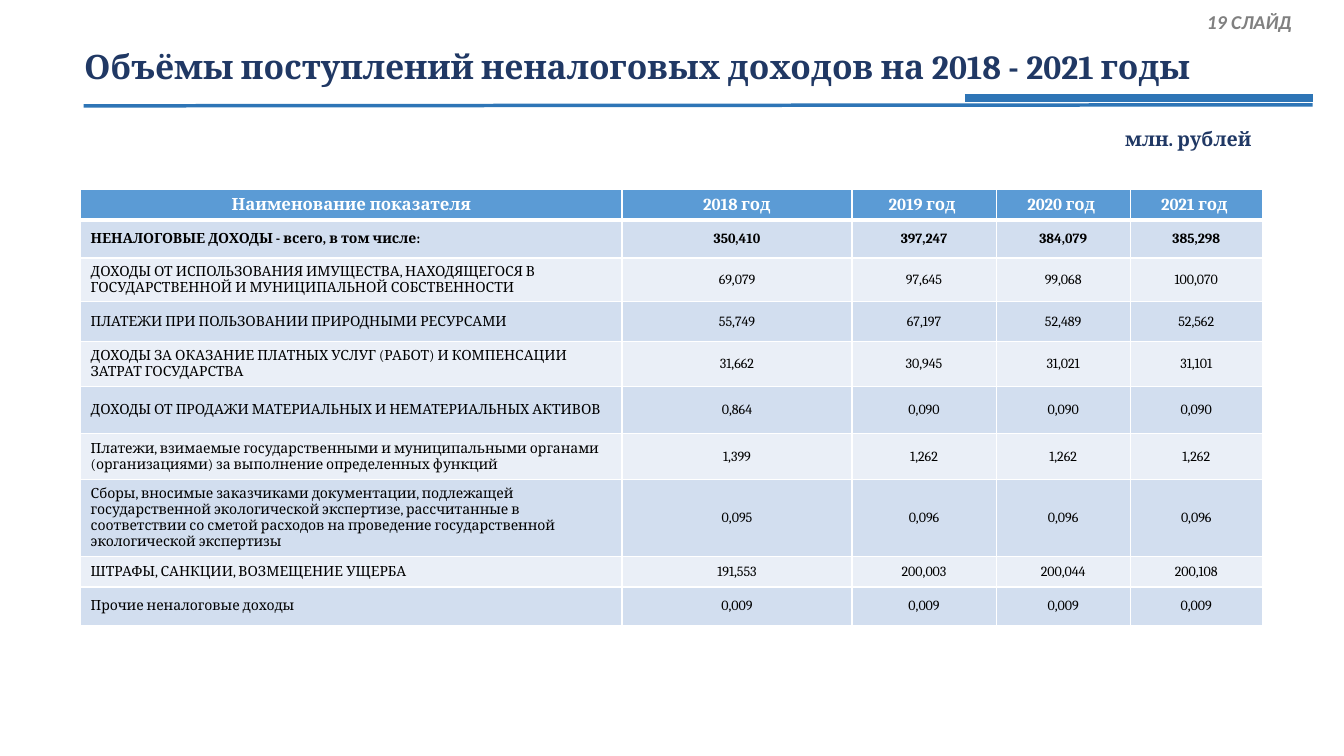
from dataclasses import dataclass

from lxml.etree import SubElement
from pptx import Presentation
from pptx.dml.color import RGBColor
from pptx.enum.shapes import MSO_CONNECTOR
from pptx.enum.text import MSO_ANCHOR, PP_ALIGN
from pptx.oxml import parse_xml
from pptx.oxml.ns import nsdecls, qn
from pptx.util import Emu, Pt

PX = 9144  # 100 px to the inch


@dataclass(frozen=True)
class Theme:
    serif: str = "Cambria"
    sans: str = "Calibri"
    navy: str = "203864"
    gray: str = "808080"
    rule: str = "2E75B6"
    header: str = "5B9BD5"
    bands: tuple = ("D2DEEF", "EAEFF7")
    white: str = "FFFFFF"
    black: str = "000000"
    title_size: int = 24
    label_size: int = 14
    header_size: int = 12
    body_size: int = 10


THEME = Theme()

YEARS = ["2018 год", "2019 год ", "2020 год ", "2021 год "]
INCOME = [
    ("НЕНАЛОГОВЫЕ ДОХОДЫ - всего, в том числе:", "350,410", "397,247", "384,079", "385,298"),
    ("ДОХОДЫ ОТ ИСПОЛЬЗОВАНИЯ ИМУЩЕСТВА, НАХОДЯЩЕГОСЯ В ГОСУДАРСТВЕННОЙ И "
     "МУНИЦИПАЛЬНОЙ СОБСТВЕННОСТИ", "69,079", "97,645", "99,068", "100,070"),
    ("ПЛАТЕЖИ ПРИ ПОЛЬЗОВАНИИ ПРИРОДНЫМИ РЕСУРСАМИ", "55,749", "67,197", "52,489", "52,562"),
    ("ДОХОДЫ ЗА ОКАЗАНИЕ ПЛАТНЫХ УСЛУГ (РАБОТ) И КОМПЕНСАЦИИ ЗАТРАТ ГОСУДАРСТВА",
     "31,662", "30,945", "31,021", "31,101"),
    ("ДОХОДЫ ОТ ПРОДАЖИ МАТЕРИАЛЬНЫХ И НЕМАТЕРИАЛЬНЫХ АКТИВОВ",
     "0,864", "0,090", "0,090", "0,090"),
    ("Платежи, взимаемые государственными и муниципальными органами "
     "(организациями) за выполнение определенных функций", "1,399", "1,262", "1,262", "1,262"),
    ("Сборы, вносимые заказчиками документации, подлежащей государственной "
     "экологической экспертизе, рассчитанные в соответствии со сметой расходов на "
     "проведение государственной экологической экспертизы",
     "0,095", "0,096", "0,096", "0,096"),
    ("ШТРАФЫ, САНКЦИИ, ВОЗМЕЩЕНИЕ УЩЕРБА", "191,553", "200,003", "200,044", "200,108"),
    ("Прочие неналоговые доходы", "0,009", "0,009", "0,009", "0,009"),
]
COLUMN_WIDTHS = [537, 228, 143, 133, 131]
ROW_HEIGHTS = [29, 38, 43, 39, 45, 47, 45, 77, 30, 38]


def px(*lengths):
    return [Emu(n * PX) for n in lengths]


def write(tf, text, size, color, font=THEME.serif, bold=True, italic=False,
          align=PP_ALIGN.LEFT):
    p = tf.paragraphs[0]
    p.text = text
    p.alignment = align
    f = p.runs[0].font
    f.name, f.size, f.bold, f.italic = font, Pt(size), bold, italic
    f.color.rgb = RGBColor.from_string(color)


def add_label(slide, box, text, size, color, anchor=MSO_ANCHOR.TOP, **style):
    tf = slide.shapes.add_textbox(*px(*box)).text_frame
    tf.word_wrap = True
    tf.vertical_anchor = anchor
    write(tf, text, size, color, **style)


def add_rule(slide, start, end, weight):
    line = slide.shapes.add_connector(MSO_CONNECTOR.STRAIGHT, *px(*start, *end))
    line.line.color.rgb = RGBColor.from_string(THEME.rule)
    line.line.width = Pt(weight)
    SubElement(line._element.spPr, qn("a:effectLst"))


def add_header(slide, box):
    """Centred title with a thin rule below it and a thick accent at the right."""
    left, top, width, height = box
    add_label(slide, box, "Объёмы поступлений неналоговых доходов на 2018 - 2021 годы",
              THEME.title_size, THEME.navy, MSO_ANCHOR.MIDDLE, align=PP_ALIGN.CENTER)
    bottom, right = top + height, left + width + 65
    add_rule(slide, (left + 56, bottom), (right, bottom - 1), 2.5)
    add_rule(slide, (right - 345, bottom - 8), (right, bottom - 8), 6)


def set_borders(cell, top, bottom):
    tcPr = cell._tc.get_or_add_tcPr()
    weights = {"lnL": 1, "lnR": 1, "lnT": top, "lnB": bottom}
    for i, (side, weight) in enumerate(weights.items()):
        tcPr.insert(i, parse_xml(
            f'<a:{side} {nsdecls("a")} w="{Pt(weight)}"><a:solidFill>'
            f'<a:srgbClr val="{THEME.white}"/></a:solidFill></a:{side}>'))


def add_income_table(slide, left, top):
    rows = [("Наименование показателя", *YEARS), *INCOME]
    box = px(left, top, sum(COLUMN_WIDTHS), sum(ROW_HEIGHTS))
    table = slide.shapes.add_table(len(rows), len(COLUMN_WIDTHS), *box).table
    for column, width in zip(table.columns, px(*COLUMN_WIDTHS)):
        column.width = width
    for row, height in zip(table.rows, px(*ROW_HEIGHTS)):
        row.height = height
    for i, texts in enumerate(rows):
        is_header = i == 0
        fill = THEME.header if is_header else THEME.bands[(i - 1) % 2]
        size = THEME.header_size if is_header else THEME.body_size
        color = THEME.white if is_header else THEME.black
        for j, text in enumerate(texts):
            cell = table.cell(i, j)
            cell.vertical_anchor = MSO_ANCHOR.MIDDLE
            cell.fill.solid()
            cell.fill.fore_color.rgb = RGBColor.from_string(fill)
            set_borders(cell, top=3 if i == 1 else 1, bottom=3 if is_header else 1)
            centred = is_header or j > 0
            write(cell.text_frame, text, size, color, bold=i < 2,
                  align=PP_ALIGN.CENTER if centred else PP_ALIGN.LEFT)


def build_income_slide(prs):
    slide = prs.slides.add_slide(prs.slide_layouts[6])
    add_header(slide, (27, 26, 1210, 79))
    add_label(slide, (1080, 121, 171, 34), "млн. рублей", THEME.label_size,
              THEME.navy, align=PP_ALIGN.RIGHT)
    add_label(slide, (1177, 5, 114, 34), "19 СЛАЙД", THEME.label_size, THEME.gray,
              font=THEME.sans, italic=True, align=PP_ALIGN.RIGHT)
    add_income_table(slide, 80, 188)


def main():
    prs = Presentation()
    prs.slide_width, prs.slide_height = px(1333, 750)
    build_income_slide(prs)
    prs.save("out.pptx")


if __name__ == "__main__":
    main()
